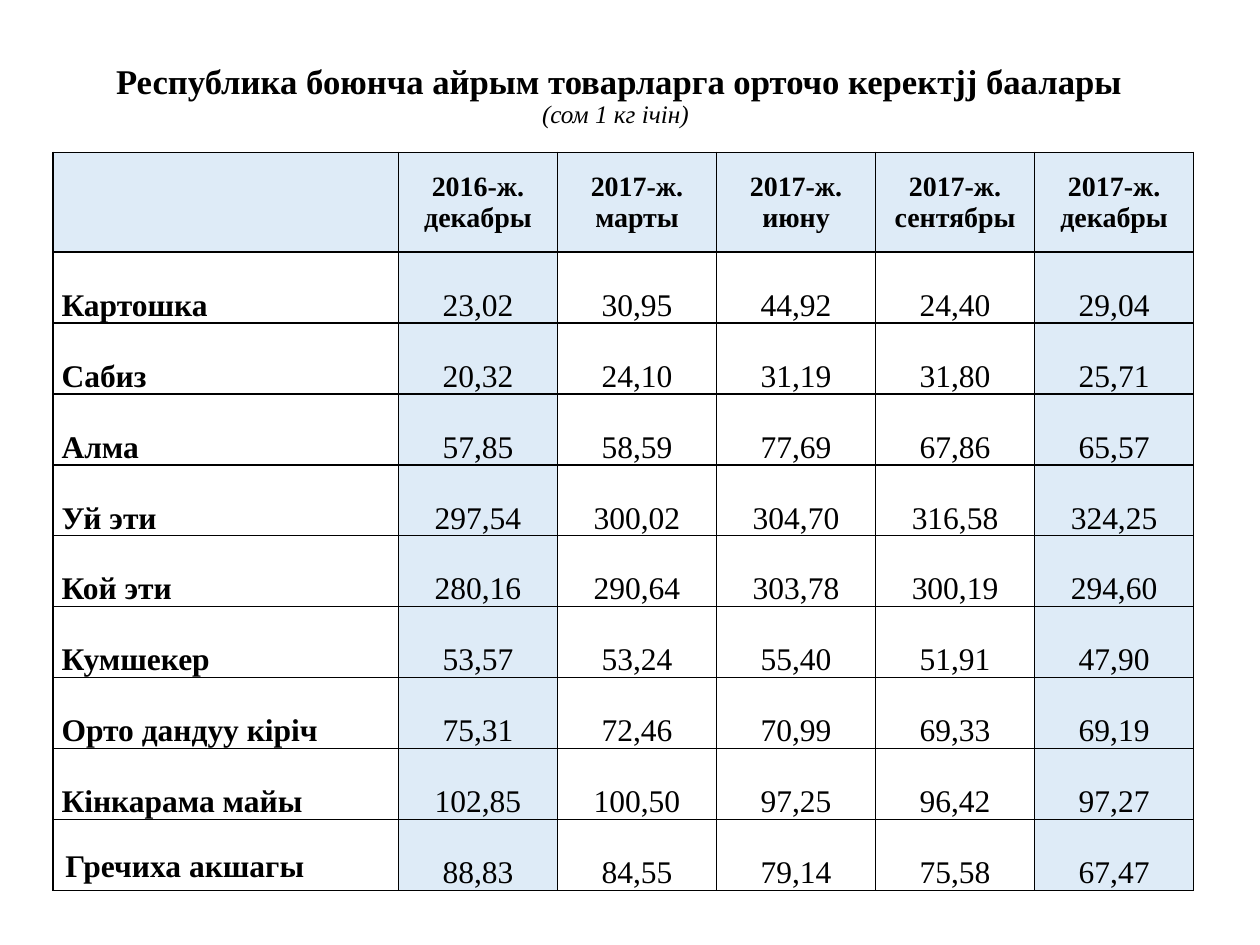
from dataclasses import dataclass
from typing import Any

from lxml.etree import SubElement
from pptx import Presentation
from pptx.dml.color import RGBColor
from pptx.enum.text import MSO_ANCHOR as Anchor, PP_ALIGN as Align
from pptx.oxml.ns import qn
from pptx.util import Pt

BLACK = RGBColor(0x00, 0x00, 0x00)
PALE_BLUE = RGBColor(0xDE, 0xEB, 0xF7)
FONT_NAME = "Times New Roman"
BORDER_WIDTH = Pt(1)

LABEL_WIDTH, MONTH_WIDTH = Pt(197.5), Pt(90.9)
HEADER_HEIGHT, PRODUCT_HEIGHT = Pt(56.9), Pt(40.55)


@dataclass(frozen=True)
class CellStyle:
    font: dict[str, Any]
    paragraph: dict[str, Any]
    anchor: Anchor = Anchor.BOTTOM
    side: float = 0
    end: float = 0


@dataclass(frozen=True)
class Product:
    name: str
    prices: str


HEADING = CellStyle(
    {"size": Pt(16), "bold": True},
    {"alignment": Align.CENTER, "space_before": Pt(4), "space_after": Pt(4)},
    Anchor.MIDDLE,
    side=5,
)
LABEL_FONT = {"size": Pt(18), "bold": True}
LABEL_PARAGRAPH = {"alignment": Align.LEFT, "space_before": Pt(4)}
LABEL = CellStyle(LABEL_FONT, LABEL_PARAGRAPH, side=5)
LAST_LABEL = CellStyle(LABEL_FONT, LABEL_PARAGRAPH, side=7.2, end=3.6)
PRICE = CellStyle({"size": Pt(18), "bold": False}, {"alignment": Align.CENTER})

MONTHS = [
    "2016-ж. декабры",
    "2017-ж. марты",
    "2017-ж. июну",
    "2017-ж. сентябры",
    "2017-ж. декабры",
]
PRODUCTS = [
    Product("Картошка", "23,02 30,95 44,92 24,40 29,04"),
    Product("Сабиз", "20,32 24,10 31,19 31,80 25,71"),
    Product("Алма", "57,85 58,59 77,69 67,86 65,57"),
    Product("Уй эти", "297,54 300,02 304,70 316,58 324,25"),
    Product("Кой эти", "280,16 290,64 303,78 300,19 294,60"),
    Product("Кумшекер", "53,57 53,24 55,40 51,91 47,90"),
    Product("Орто дандуу кіріч", "75,31 72,46 70,99 69,33 69,19"),
    Product("Кінкарама майы", "102,85 100,50 97,25 96,42 97,27"),
    Product("Гречиха акшагы", "88,83 84,55 79,14 75,58 67,47"),
]


def apply(target: Any, values: dict[str, Any]) -> None:
    for name, value in values.items():
        setattr(target, name, value)


def add_run(paragraph: Any, text: str, font: dict[str, Any]) -> None:
    run = paragraph.add_run()
    run.text = text
    apply(run.font, {"name": FONT_NAME, **font})
    run.font.color.rgb = BLACK


def add_borders(cell: Any) -> None:
    properties = cell._tc.get_or_add_tcPr()
    for position, side in enumerate(("lnL", "lnR", "lnT", "lnB")):
        line = SubElement(properties, qn(f"a:{side}"), w=str(BORDER_WIDTH))
        fill = SubElement(line, qn("a:solidFill"))
        SubElement(fill, qn("a:srgbClr"), val=str(BLACK))
        properties.insert(position, line)


def fill_cell(cell: Any, text: str, style: CellStyle, shaded: bool) -> None:
    apply(cell, {
        "vertical_anchor": style.anchor,
        "margin_left": Pt(style.side),
        "margin_right": Pt(style.side),
        "margin_top": Pt(style.end),
        "margin_bottom": Pt(style.end),
    })
    if shaded:
        cell.fill.solid()
        cell.fill.fore_color.rgb = PALE_BLUE
    else:
        cell.fill.background()
    add_borders(cell)
    if text:
        paragraph = cell.text_frame.paragraphs[0]
        apply(paragraph, style.paragraph)
        add_run(paragraph, text, style.font)


def add_title(slide: Any) -> None:
    title = slide.shapes.add_textbox(Pt(29.5), Pt(28.8), Pt(648), Pt(52.6)).text_frame
    apply(title, {"word_wrap": True, "vertical_anchor": Anchor.MIDDLE})
    paragraph = title.paragraphs[0]
    apply(paragraph, {"alignment": Align.CENTER, "line_spacing": 0.9})
    add_run(
        paragraph,
        "Республика боюнча айрым товарларга орточо керектјј баалары",
        {"size": Pt(19.8), "bold": True},
    )
    paragraph.add_line_break()
    add_run(paragraph, "(сом 1 кг ічін) ", {"size": Pt(14.4), "italic": True})


def add_price_table(slide: Any) -> None:
    prices = slide.shapes.add_table(
        len(PRODUCTS) + 1, len(MONTHS) + 1,
        Pt(30.2), Pt(87.1),
        LABEL_WIDTH + MONTH_WIDTH * len(MONTHS),
        HEADER_HEIGHT + PRODUCT_HEIGHT * len(PRODUCTS),
    ).table
    apply(prices, {"first_row": False, "horz_banding": False})
    for index, column in enumerate(prices.columns):
        column.width = MONTH_WIDTH if index else LABEL_WIDTH
    for index, row in enumerate(prices.rows):
        row.height = PRODUCT_HEIGHT if index else HEADER_HEIGHT

    for column, month in enumerate(["", *MONTHS]):
        fill_cell(prices.cell(0, column), month, HEADING, True)
    for row, product in enumerate(PRODUCTS, start=1):
        label_style = LAST_LABEL if row == len(PRODUCTS) else LABEL
        fill_cell(prices.cell(row, 0), product.name, label_style, False)
        for column, price in enumerate(product.prices.split(), start=1):
            december = column in (1, len(MONTHS))
            fill_cell(prices.cell(row, column), price, PRICE, december)


def main() -> None:
    presentation = Presentation()
    apply(presentation, {"slide_width": Pt(720), "slide_height": Pt(540)})
    slide = presentation.slides.add_slide(presentation.slide_layouts[6])
    add_title(slide)
    add_price_table(slide)
    presentation.save("out.pptx")


if __name__ == "__main__":
    main()
